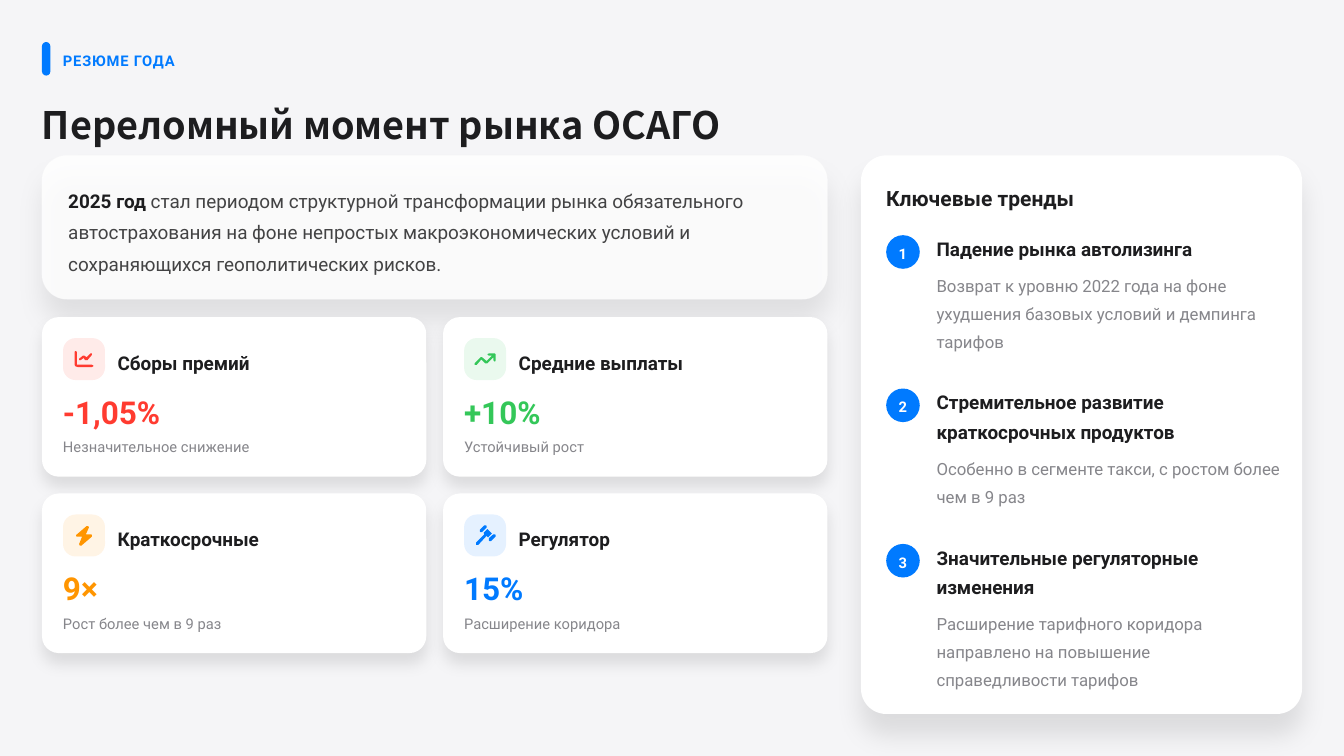
from dataclasses import dataclass

from lxml.etree import SubElement
from pptx import Presentation
from pptx.dml.color import RGBColor
from pptx.enum.shapes import MSO_SHAPE
from pptx.enum.text import MSO_ANCHOR, MSO_AUTO_SIZE, PP_ALIGN
from pptx.oxml.ns import qn
from pptx.util import Inches, Pt


@dataclass(frozen=True)
class Theme:
    bg: str = "F5F5F7"
    white: str = "FFFFFF"
    ink: str = "1D1D1F"
    body: str = "434344"
    muted: str = "86868B"
    blue: str = "007AFF"
    red: str = "FF3B30"
    green: str = "34C759"
    orange: str = "FF9500"
    font: str = "Roboto"
    title_font: str = "Noto Sans CJK SC"
    title: int = 36
    value: int = 30
    heading: int = 20
    label: int = 18
    desc: int = 16
    small: int = 14


T = Theme()

# Content
BADGE = "РЕЗЮМЕ ГОДА"
TITLE = "Переломный момент рынка ОСАГО"
INTRO = [
    ("2025 год", T.ink, True),
    (" стал периодом структурной трансформации рынка обязательного автострахования "
     "на фоне непростых макроэкономических условий и сохраняющихся геополитических рисков.",
     T.body, False),
]
METRICS = [  # label, value, note, colour, icon
    ("Сборы премий", "-1,05%", "Незначительное снижение", T.red, "chart"),
    ("Средние выплаты", "+10%", "Устойчивый рост", T.green, "arrow"),
    ("Краткосрочные", "9×", "Рост более чем в 9 раз", T.orange, "bolt"),
    ("Регулятор", "15%", "Расширение коридора", T.blue, "gavel"),
]
TRENDS_HEADING = "Ключевые тренды"
TRENDS = [  # heading, its lines, description, its lines
    ("Падение рынка автолизинга", 1,
     "Возврат к уровню 2022 года на фоне ухудшения базовых условий и демпинга тарифов", 3),
    ("Стремительное развитие краткосрочных продуктов", 2,
     "Особенно в сегменте такси, с ростом более чем в 9 раз", 2),
    ("Значительные регуляторные изменения", 2,
     "Расширение тарифного коридора направлено на повышение справедливости тарифов", 3),
]

# Icon outlines in hundredths of an inch
ICONS = {
    "chart": [
        [(0, 3), (1, 2), (2, 2), (3, 3), (3, 20), (4, 20), (23, 20), (25, 21), (25, 22),
         (23, 23), (4, 23), (1, 22), (0, 20)],
        [(23, 7), (23, 5), (21, 5), (16, 10), (13, 8), (11, 8), (6, 12), (6, 14), (8, 14),
         (12, 11), (14, 14), (17, 14)],
    ],
    "arrow": [
        [(19, 8), (17, 6), (19, 5), (27, 5), (28, 6), (28, 14), (27, 16), (25, 14), (25, 10),
         (17, 18), (14, 18), (9, 13), (3, 20), (0, 20), (0, 18), (8, 10), (10, 10), (16, 15),
         (23, 8)],
    ],
    "bolt": [
        [(16, 0), (17, 2), (13, 11), (20, 11), (21, 12), (21, 14), (7, 26), (5, 26), (4, 24),
         (8, 14), (1, 14), (0, 13), (0, 12), (14, 0)],
    ],
    "gavel": [
        [(8, 8), (7, 7), (7, 5), (13, -1), (15, -1), (16, 0), (16, 2), (10, 8)],
        [(13, 11), (12, 9), (17, 4), (23, 10), (18, 15), (16, 13), (5, 25), (2, 25), (2, 22)],
        [(19, 19), (19, 16), (25, 11), (27, 11), (28, 12), (28, 14), (22, 20), (20, 20)],
    ],
}

# Grid, in points on a 1280 x 720 slide
W, H = 1280, 720
MARGIN, GAP, PAD = 40, 16, 20
TOP, INTRO_H = 148, 137
COL_W, ROW_H, GRID_TOP = 366, 152, 302
PANEL_X, PANEL_W, PANEL_H = 820, 420, 532
PANEL_PAD, TREND_GAP, DOT, TILE = 24, 32, 32, 40
HEAD_LINE, DESC_LINE = 28, 26


def set_alpha(fill_format_parent, percent):
    color = next(fill_format_parent.iter(qn("a:srgbClr")))
    SubElement(color, qn("a:alpha"), val=str(percent * 1000))


def paint(sp, color, alpha=None):
    sp.shadow.inherit = False
    sp.fill.solid()
    sp.fill.fore_color.rgb = RGBColor.from_string(color)
    sp.line.fill.background()
    if alpha:
        set_alpha(sp._element.spPr, alpha)
    return sp


def add_box(s, x, y, w, h, radius, color, alpha=None):
    sp = s.shapes.add_shape(MSO_SHAPE.ROUNDED_RECTANGLE, Pt(x), Pt(y), Pt(w), Pt(h))
    sp.adjustments[0] = radius / min(w, h)
    return paint(sp, color, alpha)


def add_shadow(sp, blur, dist):
    effects = sp._element.spPr.find(qn("a:effectLst"))
    shadow = SubElement(effects, qn("a:outerShdw"), blurRad=str(Pt(blur)), dist=str(Pt(dist)),
                        dir="5400000", algn="ctr", rotWithShape="0")
    color = SubElement(shadow, qn("a:srgbClr"), val="000000")
    SubElement(color, qn("a:alpha"), val="10000")


def write(sp, runs, size, spacing=1.0, align=PP_ALIGN.LEFT, font=T.font):
    """Fill a shape with runs given as (text, colour, bold)."""
    tf = sp.text_frame
    tf.word_wrap = True
    tf.auto_size = MSO_AUTO_SIZE.NONE
    tf.vertical_anchor = MSO_ANCHOR.MIDDLE
    tf.margin_left = tf.margin_right = tf.margin_top = tf.margin_bottom = 0
    p = tf.paragraphs[0]
    p.alignment, p.line_spacing, p.space_before = align, spacing, Pt(0)
    for text, color, bold in runs:
        r = p.add_run()
        r.text = text
        r.font.name, r.font.size, r.font.bold = font, Pt(size), bold
        r.font.color.rgb = RGBColor.from_string(color)
    return p


def add_text(s, x, y, w, h, runs, size, spacing=1.0):
    return write(s.shapes.add_textbox(Pt(x), Pt(y), Pt(w), Pt(h)), runs, size, spacing)


def add_icon(s, name, x, y, color):
    outlines = ICONS[name]
    unit = Inches(0.01)
    width = max(px for outline in outlines for px, _ in outline) * unit
    first, *rest = outlines
    fb = s.shapes.build_freeform(*first[0], scale=unit)
    fb.add_line_segments(first[1:], close=True)
    for outline in rest:
        fb.move_to(*outline[0])
        fb.add_line_segments(outline[1:], close=True)
    paint(fb.convert_to_shape(Pt(x) + (Pt(TILE) - width) // 2, Pt(y + 11)), color)


def add_metric(s, x, y, label, value, note, color, icon):
    add_shadow(add_box(s, x, y, COL_W, ROW_H, 16, T.white), 15, 10)
    left, top = x + PAD, y + PAD
    add_box(s, left, top, TILE, TILE, 12, color, alpha=10)
    add_icon(s, icon, left, top, color)
    add_text(s, left + TILE + 12, top + 6, 164, HEAD_LINE, [(label, T.ink, True)], T.label, 1.3)
    add_text(s, left, top + 52, 341, 36, [(value, color, True)], T.value)
    add_text(s, left, top + 92, 333, 20, [(note, T.muted, False)], T.small, 1.2)


def add_trend(s, x, y, number, head, head_lines, desc, desc_lines):
    """Draw one numbered trend and return where it ends."""
    dot = s.shapes.add_shape(MSO_SHAPE.OVAL, Pt(x), Pt(y + 4), Pt(DOT), Pt(DOT))
    write(paint(dot, T.blue), [(str(number), T.white, True)], T.small, 1.2, PP_ALIGN.CENTER)
    left, head_h, desc_h = x + DOT + GAP, head_lines * HEAD_LINE, desc_lines * DESC_LINE
    add_text(s, left, y, 333, head_h, [(head, T.ink, True)], T.label, 1.3)
    desc_top = y + head_h + 8
    add_text(s, left, desc_top, 332, desc_h, [(desc, T.muted, False)], T.desc, 1.4)
    return desc_top + desc_h


def main():
    prs = Presentation()
    prs.slide_width, prs.slide_height = Pt(W), Pt(H)
    s = prs.slides.add_slide(prs.slide_layouts[5])
    s.background.fill.solid()
    s.background.fill.fore_color.rgb = RGBColor.from_string(T.bg)

    # Badge and title
    add_box(s, MARGIN, MARGIN, 8, 32, 4, T.blue)
    p = add_text(s, MARGIN + 20, MARGIN + 6, 117, 20, [(BADGE, T.blue, True)], T.small, 1.2)
    p.runs[0].font._element.set("spc", "70")
    title = s.shapes.title
    title.left, title.top, title.width, title.height = Pt(MARGIN), Pt(101), Pt(1218), Pt(40)
    write(title, [(TITLE, T.ink, True)], T.title, 0.9, font=T.title_font)

    # Introduction
    intro_w = 2 * COL_W + GAP
    intro = add_box(s, MARGIN, TOP, intro_w, INTRO_H, 24, T.white, alpha=85)
    intro.line.color.rgb = RGBColor.from_string(T.white)
    intro.line.width = Pt(0.96)
    set_alpha(intro.line._ln, 30)
    add_shadow(intro, 25, 20)
    add_text(s, MARGIN + 25, TOP + 25, 707, 88, INTRO, T.label, 1.4)

    # Metric cards, two to a row
    for i, metric in enumerate(METRICS):
        row, col = divmod(i, 2)
        add_metric(s, MARGIN + col * (COL_W + GAP), GRID_TOP + row * (ROW_H + GAP), *metric)

    # Trends panel
    add_shadow(add_box(s, PANEL_X, TOP, PANEL_W, PANEL_H, 24, T.white), 25, 20)
    x, y = PANEL_X + PANEL_PAD, TOP + PANEL_PAD
    add_text(s, x, y, 382, HEAD_LINE, [(TRENDS_HEADING, T.ink, True)], T.heading, 1.2)
    y += HEAD_LINE + 20
    for number, trend in enumerate(TRENDS, 1):
        y = add_trend(s, x, y, number, *trend) + TREND_GAP

    prs.save("out.pptx")


if __name__ == "__main__":
    main()
